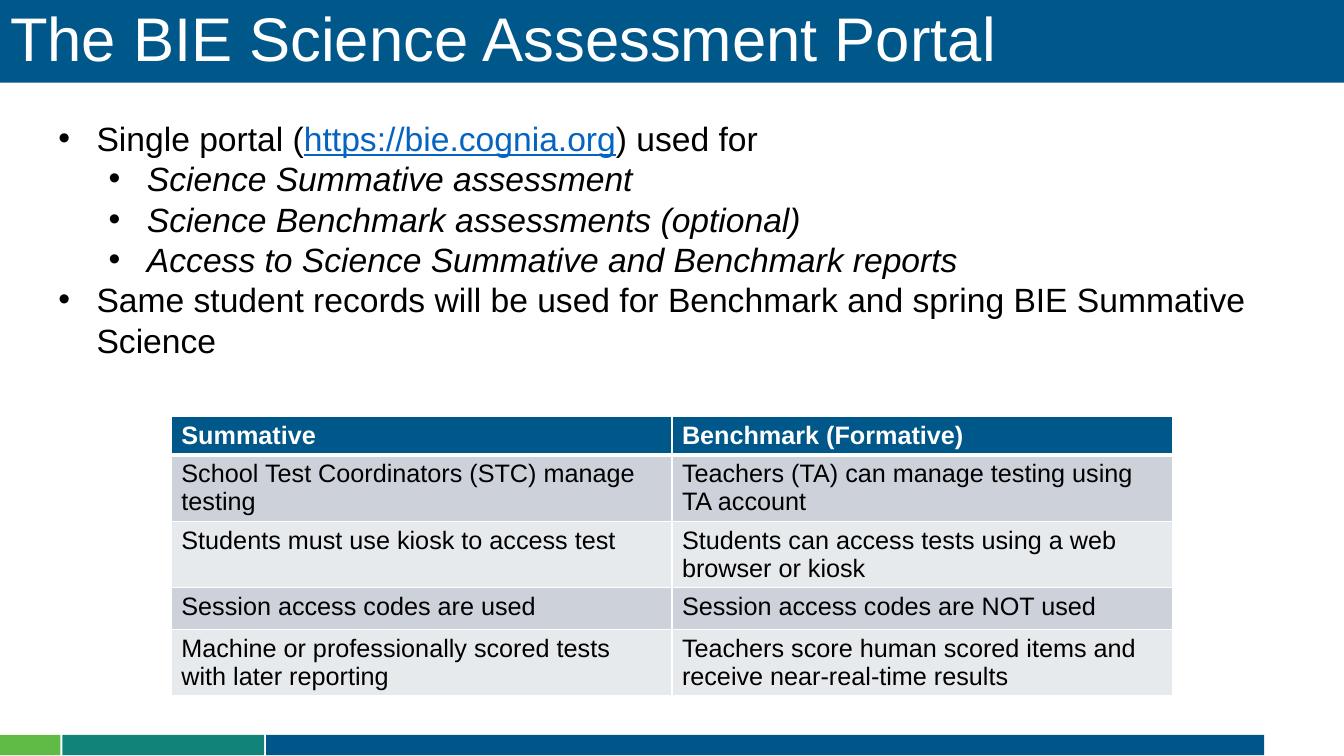
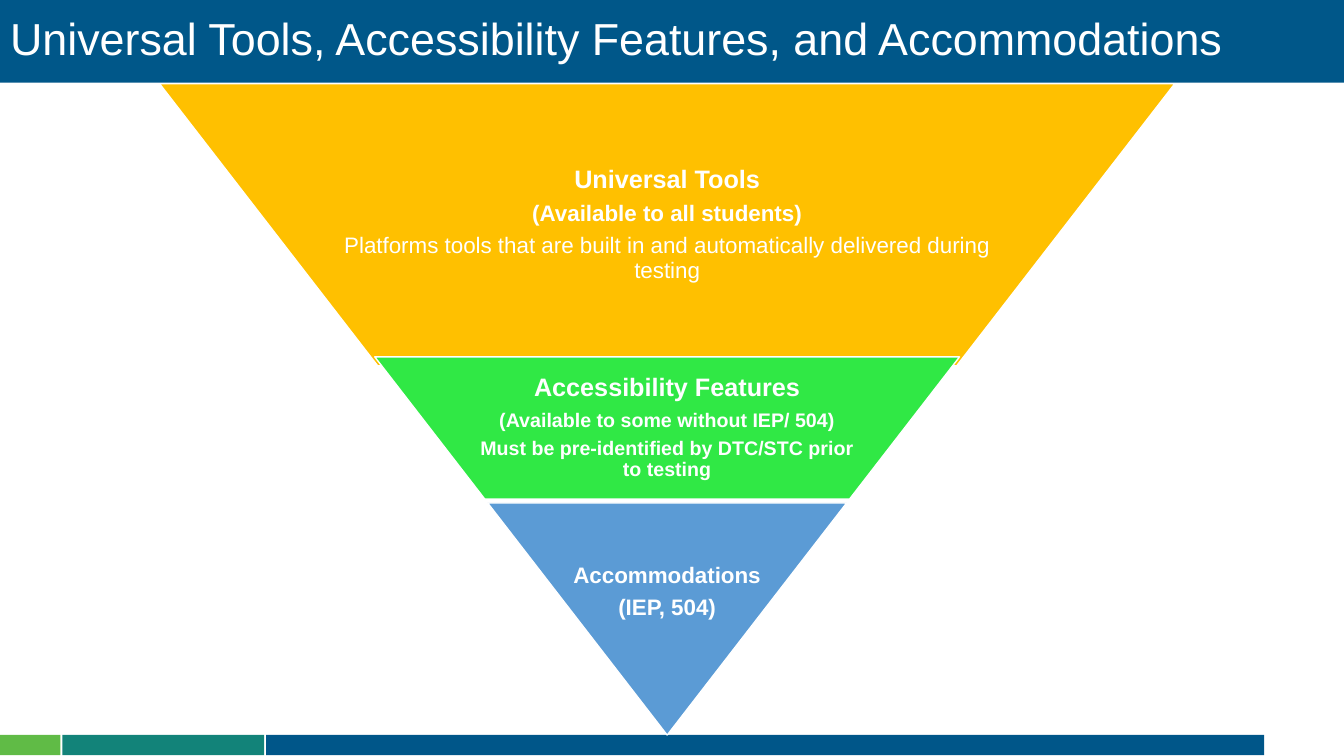
"""Build two slides on the science assessment portal and its support tiers."""
from dataclasses import dataclass

from lxml import etree
from pptx import Presentation
from pptx.dml.color import RGBColor
from pptx.enum.shapes import MSO_SHAPE
from pptx.enum.text import MSO_ANCHOR, MSO_AUTO_SIZE, PP_ALIGN
from pptx.oxml.ns import qn
from pptx.util import Emu, Inches, Pt

RECT, TRAPEZOID = MSO_SHAPE.RECTANGLE, MSO_SHAPE.TRAPEZOID
MIDDLE, LEFT, CENTER = MSO_ANCHOR.MIDDLE, PP_ALIGN.LEFT, PP_ALIGN.CENTER
NO_FIT = MSO_AUTO_SIZE.NONE
FONT = "Arial"
W, H = Inches(13.33), Inches(7.5)
TITLE_ONLY = 5
COLORS = {
    "white": "FFFFFF", "black": "000000", "link": "0563C1",
    "navy": "005789", "footer": "005689", "leaf": "60BB46", "teal": "128379",
    "band": "CCD1DA", "pale": "E7EAED",
    "gold": "FFC000", "green": "30E845", "blue": "5B9BD5",
}


@dataclass(frozen=True)
class Box:
    """A frame in percent of the slide's width and height."""
    x: float
    y: float
    w: float
    h: float

    def emu(self) -> tuple[Emu, Emu, Emu, Emu]:
        return (Emu(int(W * self.x / 100)), Emu(int(H * self.y / 100)),
                Emu(int(W * self.w / 100)), Emu(int(H * self.h / 100)))


@dataclass(frozen=True)
class Line:
    """One centred paragraph of a tier."""
    text: str
    size: int
    bold: bool = True


@dataclass(frozen=True)
class Tier:
    """One slice of the inverted pyramid; text shares are of its own size."""
    color: str
    top: float
    width: float
    height: float
    text_width: float
    text_height: float
    lines: tuple[Line, ...]


@dataclass(frozen=True)
class Bullet:
    """A bulleted paragraph made of (text, colour) pieces."""
    pieces: tuple[tuple[str, str], ...]
    level: int = 0


FOOTER_BARS = (("leaf", 0, 4.5), ("teal", 4.65, 15), ("footer", 19.8, 74.27))

BULLETS = (
    Bullet((("Single portal (", "black"), ("https://bie.cognia.org", "link"),
            (") used for", "black"))),
    Bullet((("Science Summative assessment", "black"),), 1),
    Bullet((("Science Benchmark assessments (optional)", "black"),), 1),
    Bullet((("Access to Science Summative and Benchmark reports", "black"),), 1),
    Bullet((("Same student records will be used for Benchmark and spring "
             "BIE Summative Science", "black"),)),
)

ROWS = (
    (5.07, "Summative", "Benchmark (Formative)"),
    (8.8, "School Test Coordinators (STC) manage testing",
     "Teachers (TA) can manage testing using TA account"),
    (8.8, "Students must use kiosk to access test",
     "Students can access tests using a web browser or kiosk"),
    (5.47, "Session access codes are used", "Session access codes are NOT used"),
    (8.8, "Machine or professionally scored tests with later reporting",
     "Teachers score human scored items and receive near-real-time results"),
)

PYRAMID_CENTER = 49.64
PYRAMID_SLOPE = 0.773
TIERS = (
    Tier("gold", 11.07, 75.54, 37.33, 0.65, 1, (
        Line("Universal Tools", 18),
        Line("(Available to all students)", 16),
        Line("Platforms tools that are built in and automatically delivered "
             "during testing", 16, False))),
    Tier("green", 47.2, 43.51, 18.8, 0.65, 1, (
        Line("Accessibility Features", 18),
        Line("(Available to some without IEP/ 504)", 14),
        Line("Must be pre-identified by DTC/STC prior to testing", 14))),
    Tier("blue", 66.53, 26.71, 30.67, 1, 0.77, (
        Line("Accommodations", 16), Line("(IEP, 504)", 16))),
)


def rgb(name: str) -> RGBColor:
    return RGBColor.from_string(COLORS[name])


def style(r, size: float, color: str, bold: bool = False, italic: bool = False) -> None:
    r.font.name, r.font.size = FONT, Pt(size)
    r.font.bold, r.font.italic = bold, italic
    r.font.color.rgb = rgb(color)


def fill(sp, color: str) -> None:
    sp.fill.solid()
    sp.fill.fore_color.rgb = rgb(color)


def add_block(s, kind, box: Box, color: str):
    sp = s.shapes.add_shape(kind, *box.emu())
    sp.shadow.inherit = False
    fill(sp, color)
    sp.line.fill.background()
    return sp


def add_text_box(s, box: Box):
    tf = s.shapes.add_textbox(*box.emu()).text_frame
    tf.word_wrap = True
    return tf


def add_slide(prs, title: str, size: int):
    s = prs.slides.add_slide(prs.slide_layouts[TITLE_ONLY])
    for color, x, w in FOOTER_BARS:
        add_block(s, RECT, Box(x, 97.2, w, 2.67), color)
    sp = s.shapes.title
    sp.left, sp.top, sp.width, sp.height = Box(0, 0, 100, 10.93).emu()
    fill(sp, "navy")
    tf = sp.text_frame
    tf.text = title
    tf.auto_size, tf.word_wrap, tf.vertical_anchor = NO_FIT, True, MIDDLE
    p = tf.paragraphs[0]
    p.alignment, p.line_spacing = LEFT, 0.9
    style(p.runs[0], size, "white")
    return s


def add_bullets(s) -> None:
    tf = add_text_box(s, Box(3.6, 14.93, 92.87, 33.6))
    for i, bullet in enumerate(BULLETS):
        p = tf.paragraphs[0] if i == 0 else tf.add_paragraph()
        p.level, p.line_spacing = bullet.level, Pt(28.8)
        pPr = p._p.get_or_add_pPr()
        pPr.set("marL", str(Inches(0.38 + 0.5 * bullet.level)))
        pPr.set("indent", str(Inches(-0.38)))
        etree.SubElement(pPr, qn("a:buFont"), typeface=FONT)
        etree.SubElement(pPr, qn("a:buChar"), char="•")
        for text, color in bullet.pieces:
            r = p.add_run()
            r.text = text
            style(r, 24, color, italic=bullet.level > 0)
            r.font.underline = color == "link"


def set_borders(cell, bottom: int) -> None:
    tcPr = cell._tc.get_or_add_tcPr()
    widths = {"lnL": 1, "lnR": 1, "lnT": 1, "lnB": bottom}
    for i, (side, width) in enumerate(widths.items()):
        ln = etree.Element(qn(f"a:{side}"), w=str(Pt(width)))
        solid = etree.SubElement(ln, qn("a:solidFill"))
        etree.SubElement(solid, qn("a:srgbClr"), val=COLORS["white"])
        tcPr.insert(i, ln)


def add_comparison(s) -> None:
    box = Box(12.75, 55.07, 74.49, sum(row[0] for row in ROWS))
    table = s.shapes.add_table(len(ROWS), 2, *box.emu()).table
    for i, (height, *texts) in enumerate(ROWS):
        table.rows[i].height = Emu(int(H * height / 100))
        header = i == 0
        color = "navy" if header else ("band" if i % 2 else "pale")
        for j, text in enumerate(texts):
            cell = table.cell(i, j)
            cell.text = text
            fill(cell, color)
            set_borders(cell, 3 if header else 1)
            style(cell.text_frame.paragraphs[0].runs[0], 18,
                  "white" if header else "black", bold=header)


def add_tier(s, tier: Tier) -> None:
    box = Box(PYRAMID_CENTER - tier.width / 2, tier.top, tier.width, tier.height)
    sp = add_block(s, TRAPEZOID, box, tier.color)
    sp.adjustments[0] = PYRAMID_SLOPE
    sp.rotation = 180
    sp.line.color.rgb, sp.line.width = rgb("white"), Pt(1)
    width = tier.width * tier.text_width
    tf = add_text_box(s, Box(PYRAMID_CENTER - width / 2, tier.top, width,
                             tier.height * tier.text_height))
    tf.vertical_anchor = MIDDLE
    tf.margin_left = tf.margin_right = tf.margin_top = tf.margin_bottom = Inches(0.03)
    for i, line in enumerate(tier.lines):
        p = tf.paragraphs[0] if i == 0 else tf.add_paragraph()
        p.text = line.text
        p.alignment, p.line_spacing = CENTER, 0.9
        p.space_after = Pt(round(0.35 * line.size, 1))
        style(p.runs[0], line.size, "white", line.bold)


def main() -> None:
    prs = Presentation()
    prs.slide_width, prs.slide_height = W, H
    s = add_slide(prs, "The BIE Science Assessment Portal", 44)
    add_comparison(s)
    add_bullets(s)
    s = add_slide(prs, "Universal Tools, Accessibility Features, and Accommodations", 32)
    for tier in TIERS:
        add_tier(s, tier)
    prs.save("out.pptx")


if __name__ == "__main__":
    main()
